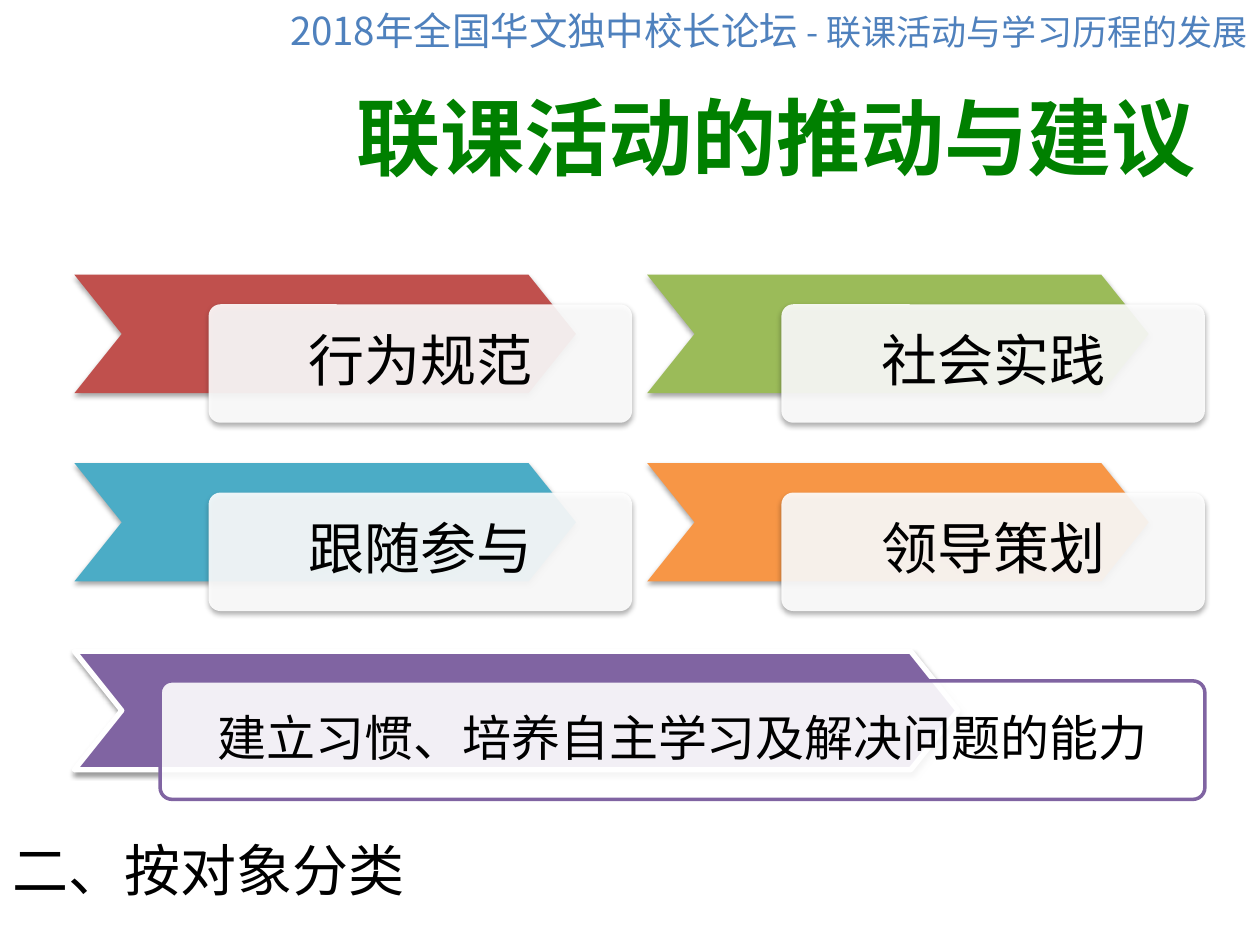
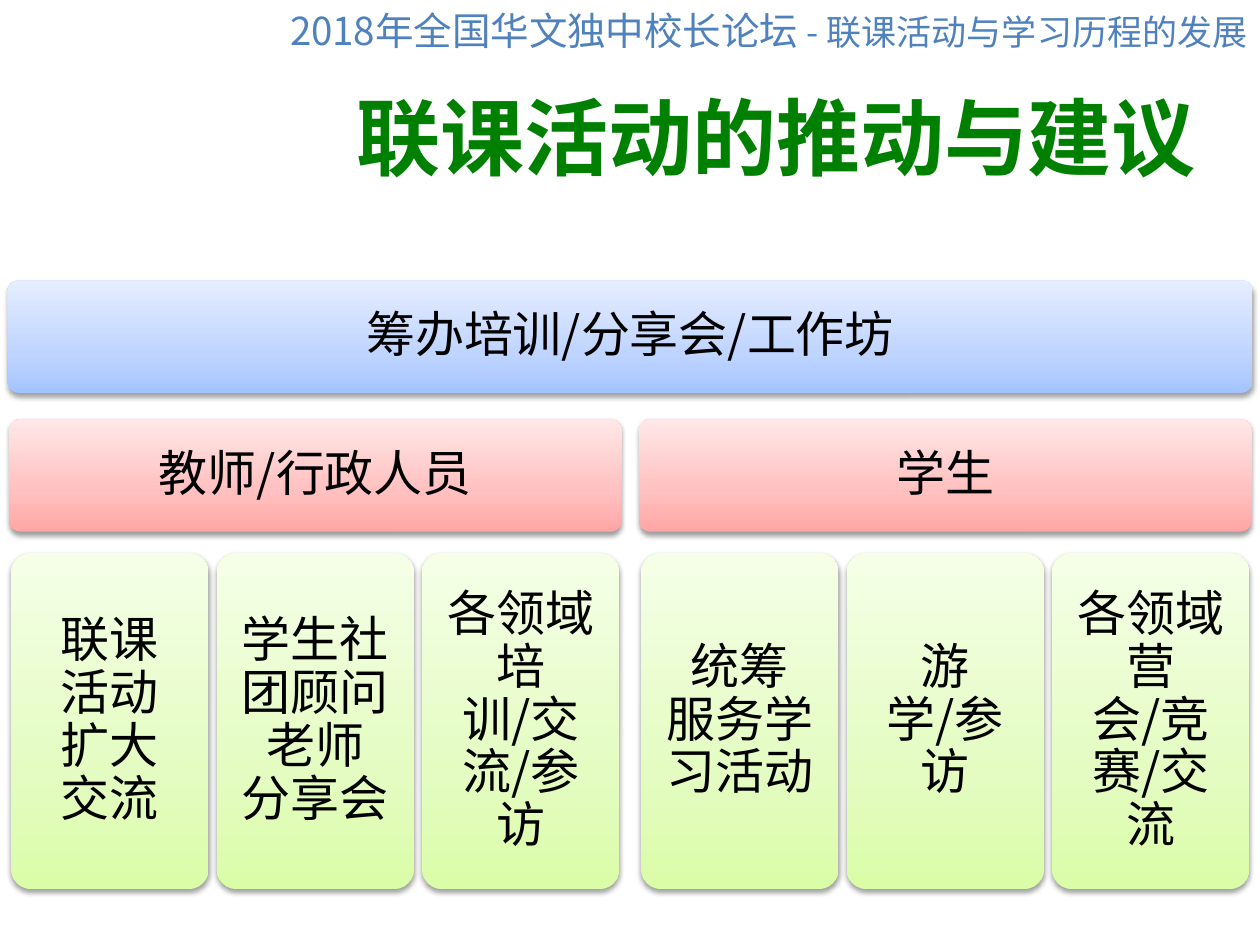
from lxml.etree import SubElement
from pptx import Presentation
from pptx.dml.color import RGBColor
from pptx.enum.shapes import MSO_SHAPE
from pptx.enum.text import MSO_ANCHOR, MSO_AUTO_SIZE, PP_ALIGN
from pptx.oxml import parse_xml
from pptx.oxml.ns import nsdecls, qn
from pptx.util import Pt

FONT = "Noto Sans CJK SC"
COLORS = {
    "title": "008000", "header": "4F81BD", "header_outline": "95B3D7",
    "text": "000000", "white": "FFFFFF",
    "red": "C0504D", "green": "9BBB59", "teal": "4BACC6",
    "orange": "F79646", "purple": "8064A2",
}
GRADIENTS = {
    "blue": ("A4C4FF", "BFD4FF", "E6EEFF"),
    "pink": ("FFA6A5", "FFC0BF", "FFE7E7"),
    "lime": ("DAFDA7", "E4FCC2", "F5FFE7"),
}
STOP_POSITIONS = (0, 35000, 100000)
FRAME_FORMATS = {
    "title": {"word_wrap": True, "vertical_anchor": MSO_ANCHOR.MIDDLE,
              "auto_size": MSO_AUTO_SIZE.NONE},
    "header": {"word_wrap": True, "auto_size": MSO_AUTO_SIZE.SHAPE_TO_FIT_TEXT},
    "caption": {"word_wrap": False, "auto_size": MSO_AUTO_SIZE.SHAPE_TO_FIT_TEXT},
    "box": {"word_wrap": True, "vertical_anchor": MSO_ANCHOR.MIDDLE},
}


def write(shape, runs, frame_format, color, align, bold=False, outline=None, inset=None):
    """Fill one paragraph with (text, size) runs; outline is (colour, width)."""
    frame = shape.text_frame
    for name, value in FRAME_FORMATS[frame_format].items():
        setattr(frame, name, value)
    if inset is not None:
        for side in ("left", "top", "right", "bottom"):
            setattr(frame, f"margin_{side}", Pt(inset))
    paragraph = frame.paragraphs[0]
    paragraph.alignment = align
    if frame_format == "box":
        paragraph.line_spacing = 0.9
    for text, size in runs:
        for number, line in enumerate(text.split("\n")):
            if number:
                paragraph.add_line_break()
            run = paragraph.add_run()
            run.text = line
            for name, value in {"name": FONT, "size": Pt(size), "bold": bold}.items():
                setattr(run.font, name, value)
            run.font.color.rgb = RGBColor.from_string(COLORS[color])
            properties = run.font._element
            SubElement(properties, qn("a:ea")).set("typeface", FONT)
            if outline:
                outline_color, width = outline
                properties.insert(0, parse_xml(
                    f'<a:ln {nsdecls("a")} w="{Pt(width)}"><a:solidFill>'
                    f'<a:srgbClr val="{COLORS[outline_color]}"/></a:solidFill></a:ln>'))


def add_block(slide, kind, place, fill, adjustment=0.1, alpha=None, line=None, shadow=38):
    """Add a preset shape; fill names a colour or gradient, shadow is its opacity."""
    shape = slide.shapes.add_shape(kind, *[Pt(length) for length in place])
    shape.adjustments[0] = adjustment
    if fill in GRADIENTS:
        shape.fill.background()
        stops = "".join(
            f'<a:gs pos="{position}"><a:srgbClr val="{color}"/></a:gs>'
            for position, color in zip(STOP_POSITIONS, GRADIENTS[fill]))
        empty_fill = shape._element.spPr.find(qn("a:noFill"))
        empty_fill.getparent().replace(empty_fill, parse_xml(
            f'<a:gradFill {nsdecls("a")} rotWithShape="1"><a:gsLst>{stops}</a:gsLst>'
            '<a:lin ang="16200000" scaled="0"/></a:gradFill>'))
    else:
        shape.fill.solid()
        shape.fill.fore_color.rgb = RGBColor.from_string(COLORS[fill])
    if alpha:
        color = shape._element.spPr.find(qn("a:solidFill"))[0]
        SubElement(color, qn("a:alpha")).set("val", str(alpha * 1000))
    if line:
        line_color, width = line
        shape.line.color.rgb = RGBColor.from_string(COLORS[line_color])
        shape.line.width = Pt(width)
    else:
        shape.line.fill.background()
    shape.shadow.inherit = False
    if shadow:
        shape._element.spPr.find(qn("a:effectLst")).append(parse_xml(
            f'<a:outerShdw {nsdecls("a")} blurRad="{Pt(3.1)}" dist="{Pt(1.7)}" '
            'dir="5400000" rotWithShape="0"><a:srgbClr val="000000">'
            f'<a:alpha val="{shadow * 1000}"/></a:srgbClr></a:outerShdw>'))
    return shape


presentation = Presentation()
presentation.slide_width, presentation.slide_height = Pt(720), Pt(540)

# Title and forum header on both slides
slides = []
for _ in range(2):
    slide = presentation.slides.add_slide(presentation.slide_layouts[5])
    title = slide.shapes.title
    title.left, title.top, title.width, title.height = Pt(167), Pt(32.4), Pt(553), Pt(90)
    write(title, [("联课活动的推动与建议", 48)], "title", "title",
          PP_ALIGN.CENTER, bold=True, outline=("white", 0.75))
    header = slide.shapes.add_textbox(Pt(0), Pt(0.7), Pt(720), Pt(33.8))
    write(header, [("2018年全国华文独中校长论坛 ", 22), ("- 联课活动与学习历程的发展", 20)],
          "header", "header", PP_ALIGN.RIGHT, outline=("header_outline", 0.25))
    slides.append(slide)
goals_slide, training_slide = slides

# Goals: two rows of two arrows, then one wide arrow
GOAL_LEFT, GOAL_TOP, GOAL_HEIGHT = 42.5, 157, 67.7
COLUMN_STEP, ROW_STEP, CARD_DROP = 327.3, 107.6, 16.9
GOALS = [
    [("行为规范", "red"), ("社会实践", "green")],
    [("跟随参与", "teal"), ("领导策划", "orange")],
]
for row, goals in enumerate(GOALS):
    for column, (goal, color) in enumerate(goals):
        left, top = GOAL_LEFT + column * COLUMN_STEP, GOAL_TOP + row * ROW_STEP
        add_block(goals_slide, MSO_SHAPE.CHEVRON, (left, top, 286.6, GOAL_HEIGHT),
                  color, adjustment=0.4, shadow=35)
        card = add_block(goals_slide, MSO_SHAPE.ROUNDED_RECTANGLE,
                         (left + 76.7, top + CARD_DROP, 242, GOAL_HEIGHT),
                         "white", alpha=90, shadow=35)
        write(card, [(goal, 32)], "box", "text", PP_ALIGN.CENTER, inset=18)

ability_top = GOAL_TOP + len(GOALS) * ROW_STEP
add_block(goals_slide, MSO_SHAPE.CHEVRON, (GOAL_LEFT, ability_top, 505, GOAL_HEIGHT),
          "purple", adjustment=0.4, line=("white", 3))
ability_card = add_block(goals_slide, MSO_SHAPE.ROUNDED_RECTANGLE,
                         (GOAL_LEFT + 49, ability_top + CARD_DROP, 597, GOAL_HEIGHT),
                         "white", alpha=90, line=("purple", 2), shadow=None)
write(ability_card, [("建立习惯、培养自主学习及解决问题的能力", 28)],
      "box", "text", PP_ALIGN.CENTER, inset=16)

caption = goals_slide.shapes.add_textbox(Pt(0), Pt(473.8), Pt(240.5), Pt(46))
write(caption, [("二、按对象分类", 32)], "caption", "text", PP_ALIGN.LEFT)

# Training: one banner, two audiences, three activities for each
AUDIENCES = [
    ("教师/行政人员", ["联课\n活动\n扩大\n交流", "学生社团顾问老师\n分享会", "各领域培训/交流/参访"]),
    ("学生", ["统筹\n服务学习活动", "游学/参访", "各领域营会/竞赛/交流"]),
]
boxes = [("筹办培训/分享会/工作坊", (4.3, 160.3, 711.4, 64.2), "blue")]
for half, (audience, activities) in enumerate(AUDIENCES):
    half_left = half * 360
    boxes.append((audience, (half_left + 5.2, 239.6, 350, 64.2), "pink"))
    for column, activity in enumerate(activities):
        boxes.append((activity, (half_left + 6.4 + column * 117.4, 316.1, 112.8, 192), "lime"))
for text, place, gradient in boxes:
    box = add_block(training_slide, MSO_SHAPE.ROUNDED_RECTANGLE, place, gradient)
    write(box, [(text, 28)], "box", "text", PP_ALIGN.CENTER, inset=8.4)

presentation.save("out.pptx")
